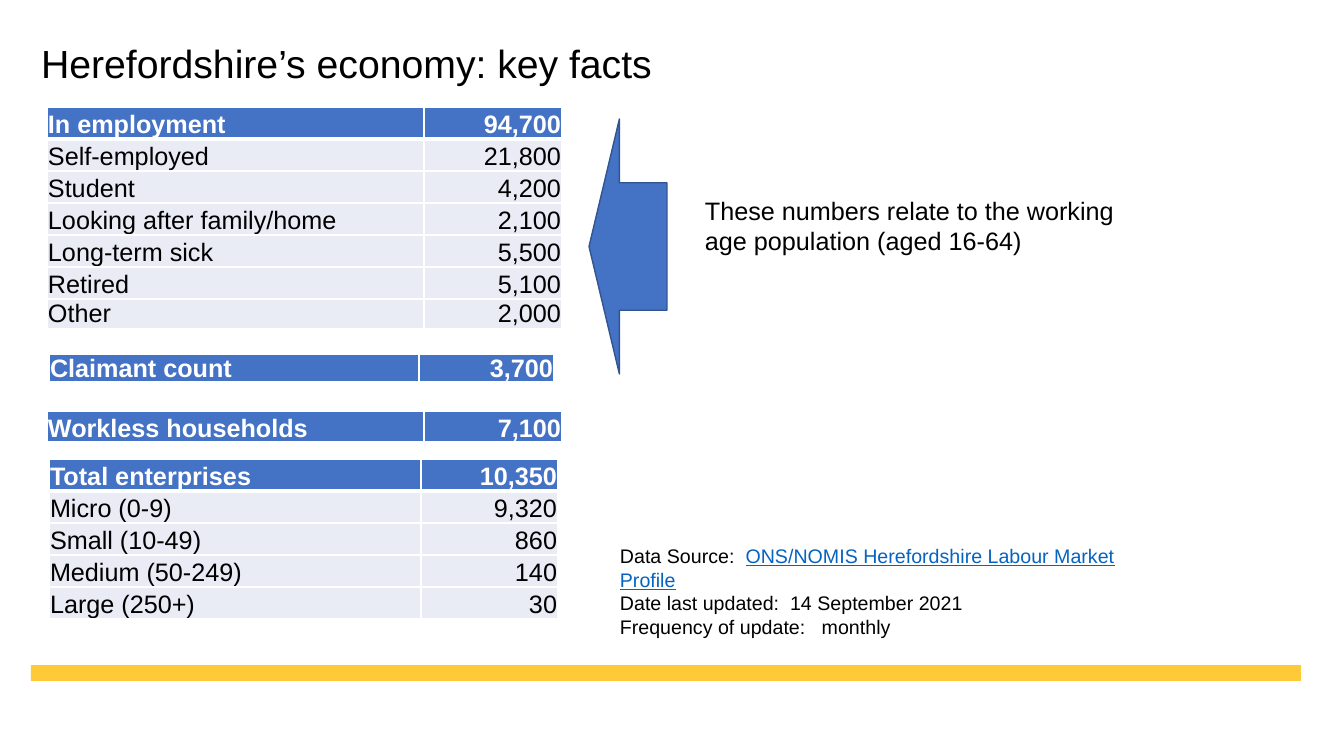
"""Build a slide of key facts about the Herefordshire economy."""
import pptx
import pptx.dml.color
import pptx.enum.shapes
import pptx.enum.text
import pptx.oxml
import pptx.oxml.ns
import pptx.util

EMU_PER_PX = 914400 / 100.8
FONT = "Arial"
BLACK, WHITE, BLUE = "000000", "FFFFFF", "4472C4"
DARK_BLUE, PALE, YELLOW, LINK = "325491", "E9EBF5", "FFCA38", "0563C1"
ALIGN = pptx.enum.text.PP_ALIGN
ANCHOR = pptx.enum.text.MSO_ANCHOR
SHAPE = pptx.enum.shapes.MSO_SHAPE

EMPLOYMENT = [
    ("In employment", "94,700"),
    ("Self-employed", "21,800"),
    ("Student", "4,200"),
    ("Looking after family/home", "2,100"),
    ("Long-term sick", "5,500"),
    ("Retired", "5,100"),
    ("Other", "2,000"),
]
ENTERPRISES = [
    ("Total enterprises", "10,350"),
    ("Micro (0-9)", "9,320"),
    ("Small (10-49)", "860"),
    ("Medium (50-249)", "140"),
    ("Large (250+)", "30"),
]


def px(length):
    """Turn pixels into EMU."""
    return pptx.util.Emu(round(length * EMU_PER_PX))


def color(value):
    """Turn a hex string into a colour."""
    return pptx.dml.color.RGBColor.from_string(value)


def write(para, text, size=18, ink=BLACK, bold=False, underline=False, align=ALIGN.LEFT):
    """Add a formatted span of text to a paragraph."""
    para.alignment = align
    span = para.add_run()
    span.text = text
    font = span.font
    font.name, font.size = FONT, pptx.util.Pt(size)
    font.bold, font.underline = bold, underline
    font.color.rgb = color(ink)


def add_title(page, box, text):
    """Place the slide title in its placeholder."""
    title = page.shapes.title
    title.left, title.top, title.width, title.height = map(px, box)
    frame = title.text_frame
    frame.vertical_anchor = ANCHOR.MIDDLE
    para = frame.paragraphs[0]
    para.line_spacing = 0.9
    write(para, text, size=28)


def add_block(page, kind, box, fill, outline=None):
    """Place a filled preset shape, outlined if asked."""
    block = page.shapes.add_shape(kind, *map(px, box))
    block.shadow.inherit = False
    block.fill.solid()
    block.fill.fore_color.rgb = color(fill)
    if outline:
        block.line.color.rgb = color(outline)
        block.line.width = pptx.util.Pt(1)
    else:
        block.line.fill.background()
    return block


def add_text(page, box, lines, size):
    """Place a text box whose lines are lists of (text, format) spans."""
    frame = page.shapes.add_textbox(*map(px, box)).text_frame
    frame.word_wrap = True
    frame.auto_size = pptx.enum.text.MSO_AUTO_SIZE.SHAPE_TO_FIT_TEXT
    for index, spans in enumerate(lines):
        para = frame.add_paragraph() if index else frame.paragraphs[0]
        for text, style in spans:
            write(para, text, size=size, **style)


def set_borders(cell, top, bottom):
    """Draw white cell borders with the given top and bottom points."""
    properties = cell._tc.get_or_add_tcPr()
    for side, points in (("L", 1), ("R", 1), ("T", top), ("B", bottom)):
        properties.append(pptx.oxml.parse_xml(
            f'<a:ln{side} {pptx.oxml.ns.nsdecls("a")} w="{pptx.util.Pt(points)}">'
            f'<a:solidFill><a:srgbClr val="{WHITE}"/></a:solidFill></a:ln{side}>'))


def fill_cell(cell, row, text, align):
    """Format one cell, with the first row as a heading."""
    heading = row == 0
    cell.margin_left = cell.margin_right = cell.margin_top = px(1)
    cell.margin_bottom = 0
    cell.vertical_anchor = ANCHOR.BOTTOM
    set_borders(cell, top=3 if row == 1 else 1, bottom=3 if heading else 1)
    cell.fill.solid()
    cell.fill.fore_color.rgb = color(BLUE if heading else PALE)
    write(cell.text_frame.paragraphs[0], text, ink=WHITE if heading else BLACK,
          bold=heading, align=align)


def add_figures(page, left, top, widths, heights, rows):
    """Place a table of labels and right-aligned figures."""
    box = (left, top, sum(widths), sum(heights))
    table = page.shapes.add_table(len(rows), len(widths), *map(px, box)).table
    for column, width in zip(table.columns, widths):
        column.width = px(width)
    for row, (height, texts) in enumerate(zip(heights, rows)):
        table.rows[row].height = px(height)
        for column, (text, align) in enumerate(zip(texts, (ALIGN.LEFT, ALIGN.RIGHT))):
            fill_cell(table.cell(row, column), row, text, align)


def add_tables(page):
    """Place the four tables down the left side."""
    wide = (377, 138)
    add_figures(page, 47, 107, wide, [32] * 6 + [29], EMPLOYMENT)
    add_figures(page, 49, 354, (370, 135), [27], [("Claimant count", "3,700")])
    add_figures(page, 47, 411, wide, [32], [("Workless households", "7,100")])
    add_figures(page, 49, 459, (372, 137), [32] * 5, ENTERPRISES)


def add_notes(page):
    """Place the arrow, its remark and the data source on the right side."""
    arrow = add_block(page, SHAPE.LEFT_ARROW, (589, 119, 78, 255), BLUE, DARK_BLUE)
    arrow.adjustments[0], arrow.adjustments[1] = 0.5, 0.39
    remark = "These numbers relate to the working age population (aged 16-64)"
    add_text(page, (695, 190, 430, 72), [[(remark, {})]], size=18)
    profile = "ONS/NOMIS Herefordshire Labour Market Profile"
    add_text(page, (610, 539, 575, 112), [
        [("Data Source:  ", {}), (profile, {"ink": LINK, "underline": True})],
        [("Date last updated:  14 September 2021", {})],
        [("Frequency of update:   monthly", {})],
    ], size=14)


def main():
    """Build and save the deck."""
    deck = pptx.Presentation()
    deck.slide_width, deck.slide_height = px(1344), px(756)
    page = deck.slides.add_slide(deck.slide_layouts[5])
    add_block(page, SHAPE.RECTANGLE, (31, 665, 1270, 16), YELLOW)
    add_title(page, (31, 40, 1270, 52), "Herefordshire’s economy: key facts")
    add_tables(page)
    add_notes(page)
    deck.save("out.pptx")


if __name__ == "__main__":
    main()
